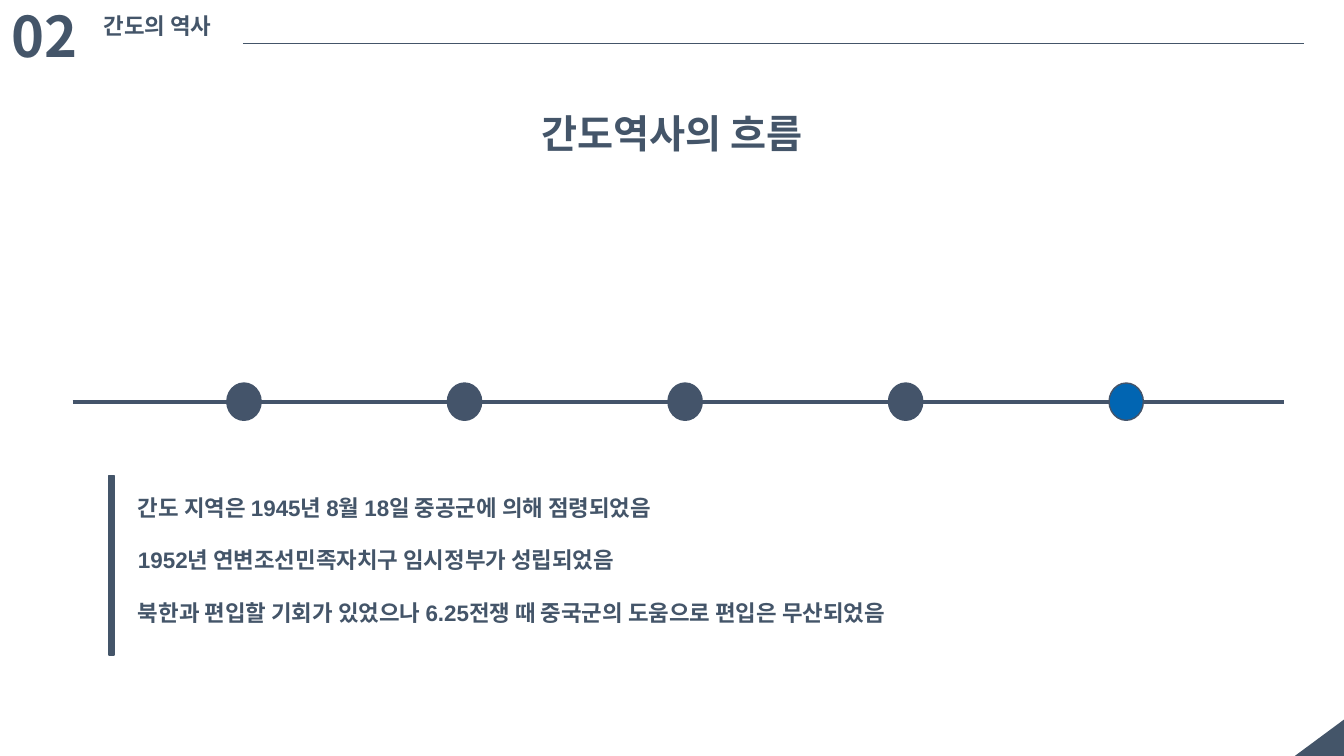
import pptx
import pptx.util
import pptx.dml.color
import pptx.enum.shapes
import pptx.enum.text
import lxml.etree

Inches, Pt = pptx.util.Inches, pptx.util.Pt
Shape = pptx.enum.shapes.MSO_SHAPE
Align = pptx.enum.text.PP_ALIGN
NAVY, SLATE, BLUE = "445569", "44546A", "0165B2"

deck = pptx.Presentation()
deck.slide_width, deck.slide_height = Inches(13.33), Inches(7.5)
slide = deck.slides.add_slide(deck.slide_layouts[5])
shapes = slide.shapes


def paint(target, color):
    """Give a fill, line or font one solid colour."""
    if hasattr(target, "solid"):
        target.solid()
        target = target.fore_color
    else:
        target = target.color
    target.rgb = pptx.dml.color.RGBColor.from_string(color)


def write(box, lines, size, font="Arial", align=Align.LEFT, wrap=True, gap=0):
    """Fill a text frame with bold lines, gap points apart."""
    frame = box.text_frame
    frame.auto_size = pptx.enum.text.MSO_AUTO_SIZE.NONE
    frame.word_wrap = wrap
    frame.vertical_anchor = pptx.enum.text.MSO_ANCHOR.TOP
    for i, line in enumerate(lines):
        para = frame.add_paragraph() if i else frame.paragraphs[0]
        para.alignment = align
        para.space_before = Pt(gap if i else 0)
        run = para.add_run()
        run.text = line
        run.font.name, run.font.size, run.font.bold = font, Pt(size), True
        paint(run.font, NAVY)


# Corner triangle
corner = shapes.add_shape(Shape.RIGHT_TRIANGLE, Inches(12.9), Inches(7.07),
                          Inches(0.37), Inches(0.5))
corner.rotation = 270
corner.shadow.inherit = False
paint(corner.fill, NAVY)
corner.line.fill.background()

# Section number and name
number = shapes.add_textbox(Inches(0.02), Inches(-0.03), Inches(1.27), Inches(0.77))
write(number, ["02"], 40, font="Noto Sans CJK KR")
section = shapes.add_textbox(Inches(0.93), Inches(0.07), Inches(1.4), Inches(0.37))
write(section, ["간도의 역사"], 16, wrap=False)

# Title
title = shapes.title
title.left, title.top = Inches(2.61), Inches(1.03)
title.width, title.height = Inches(8.11), Inches(0.57)
write(title, ["간도역사의 흐름"], 28, align=Align.CENTER)

# Header rule and time line
for left, right, y, color, width in [
    (2.41, 12.93, 0.43, NAVY, 0.75),
    (0.72, 12.73, 3.99, SLATE, 3),
]:
    rule = shapes.add_connector(pptx.enum.shapes.MSO_CONNECTOR.STRAIGHT,
                                Inches(left), Inches(y), Inches(right), Inches(y))
    paint(rule.line, color)
    rule.line.width = Pt(width)
    props = rule._element.spPr
    lxml.etree.SubElement(props, pptx.oxml.ns.qn("a:effectLst"))

# Time line dots, the last one current
for i, color in enumerate([SLATE] * 4 + [BLUE]):
    dot = shapes.add_shape(Shape.OVAL, Inches(2.25 + i * 8.75 / 4), Inches(3.8),
                           Inches(0.34), Inches(0.37))
    dot.shadow.inherit = False
    paint(dot.fill, color)
    paint(dot.line, SLATE)
    dot.line.width = Pt(1)

# Notes on the current period, with a side bar
bar = shapes.add_shape(Shape.RECTANGLE, Inches(1.08), Inches(4.72),
                       Inches(0.05), Inches(1.78))
bar.shadow.inherit = False
paint(bar.fill, NAVY)
paint(bar.line, NAVY)
bar.line.width = Pt(1)

facts = shapes.add_textbox(Inches(1.27), Inches(4.85), Inches(11.65), Inches(1.45))
write(facts, [
    "간도 지역은 1945년 8월 18일 중공군에 의해 점령되었음",
    "1952년 연변조선민족자치구 임시정부가 성립되었음",
    "북한과 편입할 기회가 있었으나 6.25전쟁 때 중국군의 도움으로 편입은 무산되었음",
], 16, gap=18.4)

deck.save("out.pptx")
